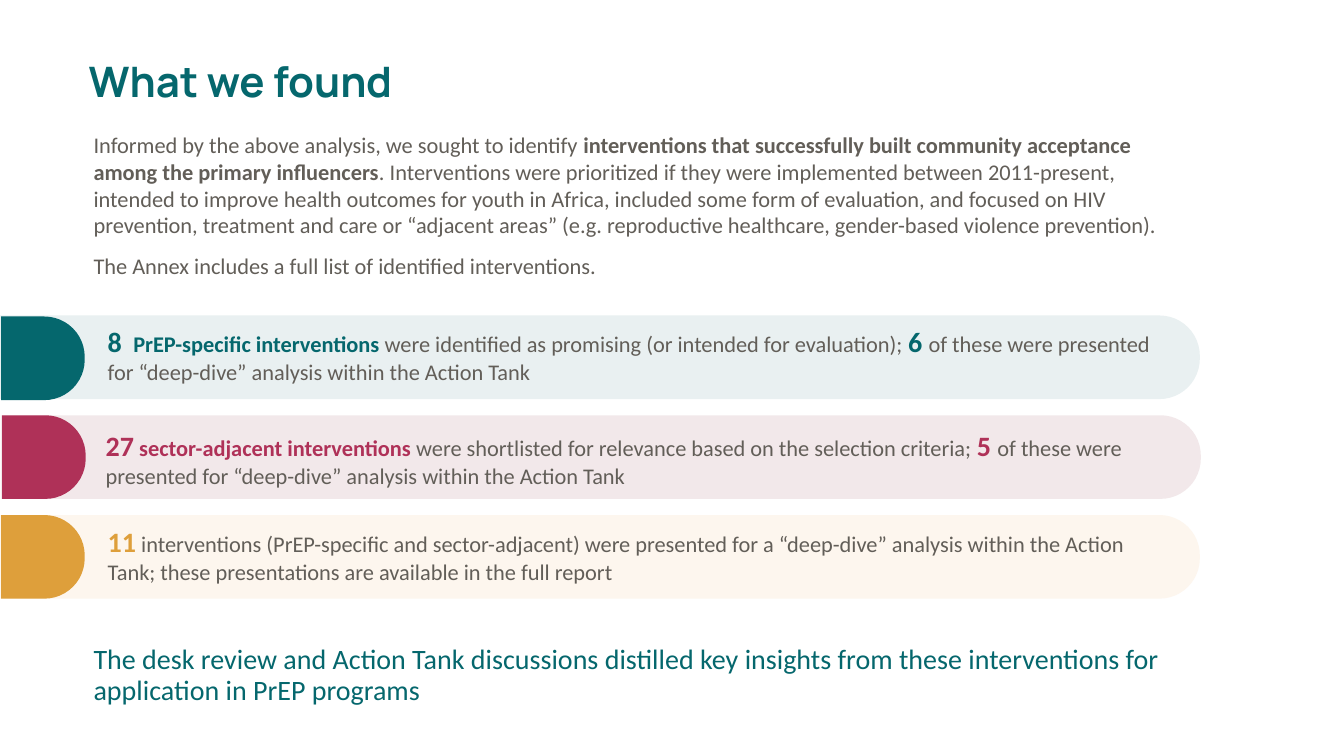
from pptx import Presentation
from pptx.dml.color import RGBColor
from pptx.enum.shapes import MSO_SHAPE
from pptx.enum.text import MSO_ANCHOR
from pptx.util import Inches, Pt

THEME = {
    "teal": "05676D", "berry": "AF3158", "gold": "DE9F3B", "grey": "625E58",
    "pale teal": "E9F0F1", "pale berry": "F2E8EA", "pale gold": "FDF6EE",
    "title font": "Manrope", "text font": "Calibri",
    "title size": 30, "large": 20, "body": 16,
}

# Each run is (text, style): plain, bold, label (bold accent) or number (large bold accent).
TITLE = [[("What we found", "plain")]]
INTRO = [
    [("Informed by the above analysis, we sought to identify ", "plain"),
     ("interventions that successfully built community acceptance among the primary influencers", "bold"),
     (". Interventions were prioritized if they were implemented between 2011-present, intended to "
      "improve health outcomes for youth in Africa, included some form of evaluation, and focused on "
      "HIV prevention, treatment and care or “adjacent areas” (e.g. reproductive healthcare, "
      "gender-based violence prevention).", "plain")],
    [("The Annex includes a full list of identified interventions.", "plain")],
]
DEEP_DIVE = "of these were presented for “deep-dive” analysis within the Action Tank"
# accent, bar left, tab left, tab top, text left, text top, text width, runs
FINDINGS = [
    ("teal", 0, 0.01, 3.14, 0.97, 3.17, 10.8, [
        ("8 ", "number"), (" PrEP-specific interventions ", "label"),
        ("were identified as promising (or intended for evaluation); ", "plain"),
        ("6 ", "number"), (DEEP_DIVE, "plain")]),
    ("berry", 0.01, 0.02, 4.12, 0.95, 4.2, 10.8, [
        ("27", "number"), (" sector-adjacent interventions ", "label"),
        ("were shortlisted for relevance based on the selection criteria; ", "plain"),
        ("5 ", "number"), (DEEP_DIVE, "plain")]),
    ("gold", 0, 0.01, 5.11, 0.97, 5.15, 11.01, [
        ("11", "number"),
        (" interventions (PrEP-specific and sector-adjacent) were presented for a “deep-dive” "
         "analysis within the Action \nTank; these presentations are available in the full report",
         "plain")]),
]
CONCLUSION = [[("The desk review and Action Tank discussions distilled key insights from these "
                "interventions for application in PrEP programs", "plain")]]

BAR_TOP, BAR_PITCH, BAR_LENGTH, BAR_HEIGHT = 3.13, 0.99, 11.9, 0.83


def color(name):
    return RGBColor.from_string(THEME[name])


def add_rounded_end(slide, left, top, length, fill):
    """Add a bar whose right end is rounded; left and top are as seen after rotation."""
    shift = (length - BAR_HEIGHT) / 2
    shape = slide.shapes.add_shape(
        MSO_SHAPE.ROUND_2_SAME_RECTANGLE, Inches(left + shift), Inches(top - shift),
        Inches(BAR_HEIGHT), Inches(length))
    shape.rotation = 90
    shape.adjustments[0] = 0.483
    shape.adjustments[1] = 0
    shape.shadow.inherit = False
    shape.fill.solid()
    shape.fill.fore_color.rgb = color(fill)
    shape.line.fill.background()


def add_run(paragraph, text, style, accent):
    for index, line in enumerate(text.split("\n")):
        if index:
            paragraph.add_line_break()
        run = paragraph.add_run()
        run.text = line
        if style != "plain":
            run.font.bold = True
        if style in ("label", "number"):
            run.font.color.rgb = color(accent)
        if style == "number":
            run.font.size = Pt(THEME["large"])


def add_text(slide, box, paragraphs, size="body", ink="grey", font="text font",
             accent=None, anchor=MSO_ANCHOR.MIDDLE, line_spacing=None):
    frame = slide.shapes.add_textbox(*map(Inches, box)).text_frame
    frame.word_wrap = True
    frame.vertical_anchor = anchor
    for index, runs in enumerate(paragraphs):
        paragraph = frame.add_paragraph() if index else frame.paragraphs[0]
        paragraph.space_before = Pt(10 if index else 0)
        paragraph.line_spacing = line_spacing
        paragraph.font.name = THEME[font]
        paragraph.font.size = Pt(THEME[size])
        paragraph.font.color.rgb = color(ink)
        for text, style in runs:
            add_run(paragraph, text, style, accent)
    return frame


def main():
    presentation = Presentation()
    presentation.slide_width = Inches(13.33)
    presentation.slide_height = Inches(7.5)
    slide = presentation.slides.add_slide(presentation.slide_layouts[6])

    title = add_text(slide, (0, 0.21, 11.5, 1.25), TITLE, "title size", "teal", "title font",
                     line_spacing=0.9)
    title.margin_left = Inches(0.88)
    title.paragraphs[0].font.bold = True
    add_text(slide, (0.83, 1.18, 11.16, 1.71), INTRO)

    for row, finding in enumerate(FINDINGS):
        accent, bar_left, tab_left, tab_top, text_left, text_top, text_width, runs = finding
        add_rounded_end(slide, bar_left, BAR_TOP + row * BAR_PITCH, BAR_LENGTH, f"pale {accent}")
        add_rounded_end(slide, tab_left, tab_top, BAR_HEIGHT, accent)
        add_text(slide, (text_left, text_top, text_width, 0.71), [runs],
                 accent=accent, anchor=MSO_ANCHOR.TOP)

    add_text(slide, (0.83, 6.19, 11.06, 1.03), CONCLUSION, "large", "teal", line_spacing=0.9)
    presentation.save("out.pptx")


if __name__ == "__main__":
    main()
